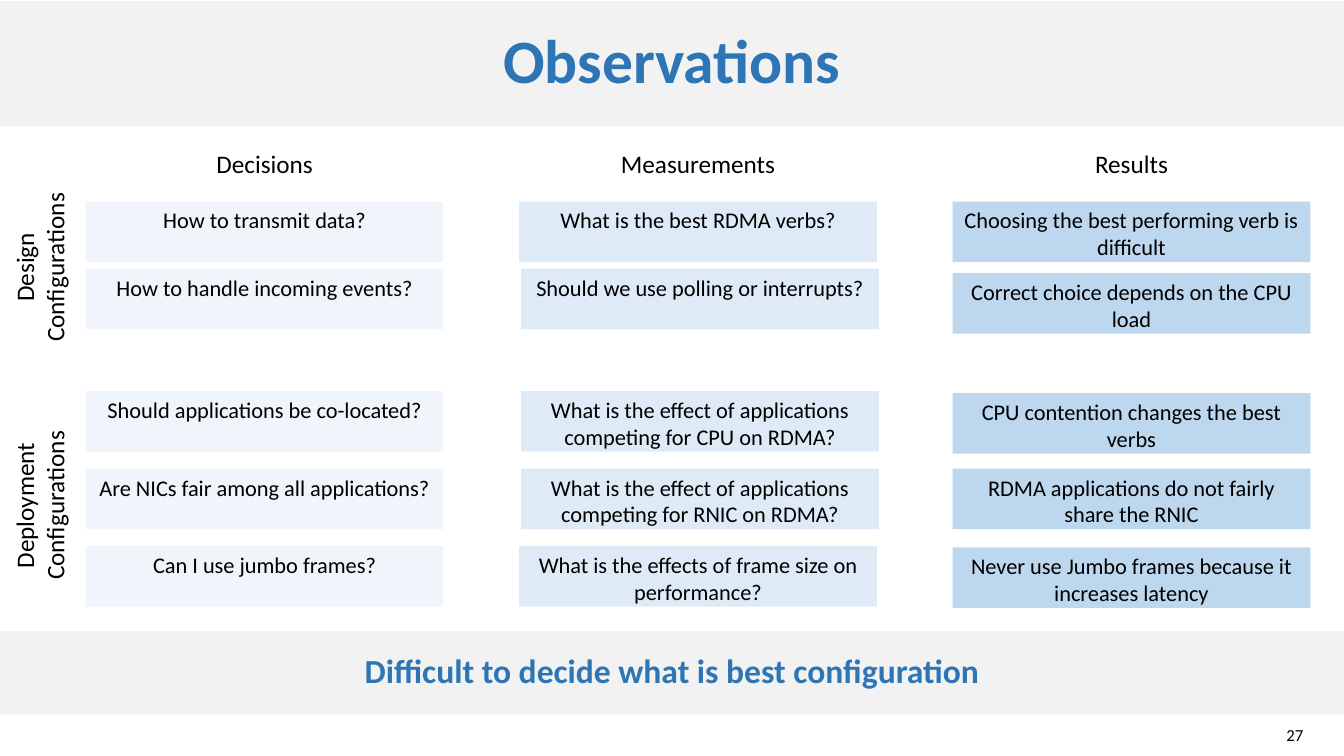
"""Build the Observations slide: a grid of decisions, measurements and results."""
from dataclasses import dataclass

from pptx import Presentation
from pptx.dml.color import RGBColor
from pptx.enum import shapes, text
from pptx.util import Pt

BLACK = RGBColor(0x00, 0x00, 0x00)
BLUE = RGBColor(0x2E, 0x75, 0xB6)
GREY = RGBColor(0xF2, 0xF2, 0xF2)
PALE = RGBColor(0xEF, 0xF5, 0xFB)
LIGHT = RGBColor(0xDE, 0xEB, 0xF7)
MEDIUM = RGBColor(0xBD, 0xD7, 0xEE)

FONT = "Calibri"
PAGE_WIDTH, PAGE_HEIGHT = 960, 540
COLUMN_LEFT, COLUMN_STEP, COLUMN_WIDTH = 61.2, 309.6, 255.6
HEADING_TOP, HEADING_HEIGHT = 102.24, 28.8
CELL_HEIGHT = 43.2


@dataclass(frozen=True)
class Area:
    """A rectangle in points."""

    left: float
    top: float
    width: float
    height: float


@dataclass(frozen=True)
class Cell:
    """One statement, its top edge and its sideways shift within a column."""

    top: float
    words: str
    shift: float = 0


@dataclass(frozen=True)
class Column:
    """A headed stack of statements."""

    heading: str
    fill: RGBColor
    cells: tuple[Cell, ...]


@dataclass(frozen=True)
class SideLabel:
    """A label turned to read upwards."""

    area: Area
    words: str


@dataclass(frozen=True)
class Band:
    """A full-width strip with a bold message."""

    area: Area
    words: str
    size: float
    space_before: float


COLUMNS = (
    Column("Decisions", PALE, (
        Cell(144, "How to transmit data?"),
        Cell(192, "How to handle incoming events?"),
        Cell(279.4, "Should applications be co-located?"),
        Cell(334.8, "Are NICs fair among all applications?"),
        Cell(390.2, "Can I use jumbo frames?"),
    )),
    Column("Measurements", LIGHT, (
        Cell(144, "What is the best RDMA verbs?"),
        Cell(192, "Should we use polling or interrupts?", 1.4),
        Cell(279.4, "What is the effect of applications competing for CPU on RDMA?", 1.4),
        Cell(334.8, "What is the effect of applications competing for RNIC on RDMA?", 1.4),
        Cell(390.2, "What is the effects of frame size on performance?"),
    )),
    Column("Results", MEDIUM, (
        Cell(144, "Choosing the best performing verb is difficult"),
        Cell(195.1, "Correct choice depends on the CPU load"),
        Cell(280.8, "CPU contention changes the best verbs"),
        Cell(334.8, "RDMA applications do not fairly share the RNIC"),
        Cell(391, "Never use Jumbo frames because it increases latency"),
    )),
)

SIDE_LABELS = (
    SideLabel(Area(-34.56, 163.44, 126, 51.12), "Design \nConfigurations "),
    SideLabel(Area(-36.72, 335.52, 130.32, 51.12), "Deployment\n Configurations "),
)

BANDS = (
    Band(Area(0, 0.72, PAGE_WIDTH, 89.28), "Observations", 44, 0),
    Band(Area(0, 450.72, PAGE_WIDTH, 59.76),
         "Difficult to decide what is best configuration", 24, 10),
)


def add_words(page, area: Area, words: str, *, size: float, fill: RGBColor | None = None,
              color: RGBColor = BLACK, bold: bool = False, wrap: bool = True,
              align=text.PP_ALIGN.CENTER, anchor=text.MSO_ANCHOR.TOP,
              line_spacing: float = 1.0, space_before: float = 0, rotation: float = 0):
    """Add formatted text, on a filled rectangle if a fill is given."""
    place = [Pt(value) for value in (area.left, area.top, area.width, area.height)]
    if fill is None:
        box = page.shapes.add_textbox(*place)
    else:
        box = page.shapes.add_shape(shapes.MSO_SHAPE.RECTANGLE, *place)
        box.shadow.inherit = False
        box.fill.solid()
        box.fill.fore_color.rgb = fill
        box.line.fill.background()
    box.rotation = rotation
    frame = box.text_frame
    frame.word_wrap = wrap
    frame.vertical_anchor = anchor
    frame.text = words
    for para in frame.paragraphs:
        para.alignment = align
        para.line_spacing = line_spacing
        para.space_before = Pt(space_before)
        for span in para.runs:
            span.font.name = FONT
            span.font.size = Pt(size)
            span.font.bold = bold
            span.font.color.rgb = color
    return box


def add_band(page, band: Band) -> None:
    """Draw a grey strip with its message."""
    add_words(page, band.area, band.words, size=band.size, fill=GREY, color=BLUE, bold=True,
              anchor=text.MSO_ANCHOR.MIDDLE, line_spacing=0.9, space_before=band.space_before)


def add_column(page, column: Column, left: float) -> None:
    """Draw a heading and the statements below it."""
    add_words(page, Area(left, HEADING_TOP, COLUMN_WIDTH, HEADING_HEIGHT),
              column.heading, size=18)
    for cell in column.cells:
        add_words(page, Area(left + cell.shift, cell.top, COLUMN_WIDTH, CELL_HEIGHT),
                  cell.words, size=16, fill=column.fill)


def main() -> None:
    """Build and save the deck."""
    deck = Presentation()
    deck.slide_width, deck.slide_height = Pt(PAGE_WIDTH), Pt(PAGE_HEIGHT)
    page = deck.slides.add_slide(deck.slide_layouts[6])
    for band in BANDS:
        add_band(page, band)
    for index, column in enumerate(COLUMNS):
        add_column(page, column, COLUMN_LEFT + index * COLUMN_STEP)
    for label in SIDE_LABELS:
        add_words(page, label.area, label.words, size=18, wrap=False, rotation=270)
    add_words(page, Area(861.12, 514.08, 77.04, 21.6), "27", size=12,
              align=text.PP_ALIGN.RIGHT, anchor=text.MSO_ANCHOR.MIDDLE)
    deck.save("out.pptx")


if __name__ == "__main__":
    main()
